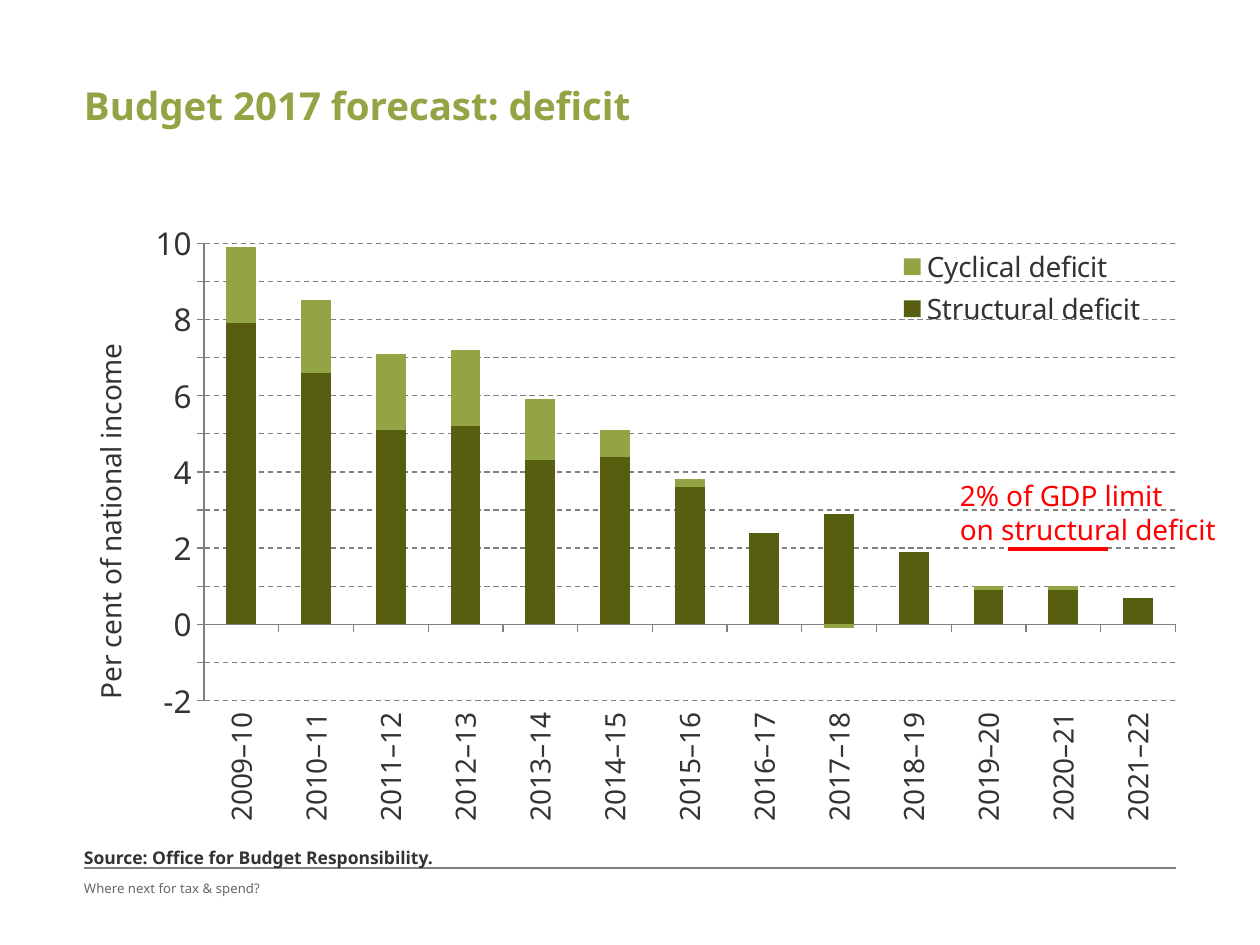
"""Build the Budget 2017 deficit forecast slide."""
from dataclasses import dataclass

from lxml.etree import SubElement
from pptx import Presentation
from pptx.chart.data import CategoryChartData
from pptx.dml.color import RGBColor
from pptx.enum.chart import XL_CHART_TYPE, XL_LEGEND_POSITION, XL_TICK_LABEL_POSITION, XL_TICK_MARK
from pptx.enum.dml import MSO_LINE
from pptx.enum.shapes import MSO_CONNECTOR
from pptx.oxml import parse_xml
from pptx.oxml.ns import nsdecls, qn
from pptx.util import Pt


@dataclass(frozen=True)
class Theme:
    font: str = "Noto Sans"
    cyclical: str = "93A445"
    structural: str = "585E10"
    text: str = "333333"
    footer: str = "666666"
    rule: str = "808080"
    limit: str = "FF0000"
    title_size: float = 22
    axis_size: float = 18
    label_size: float = 16
    source_size: float = 10
    footer_size: float = 7.5


THEME = Theme()
YEARS = [f"{year}–{(year + 1) % 100:02d}" for year in range(2009, 2022)]
SERIES = {
    "Structural deficit": (
        THEME.structural, (7.9, 6.6, 5.1, 5.2, 4.3, 4.4, 3.6, 2.4, 2.9, 1.9, 0.9, 0.9, 0.7)),
    "Cyclical deficit": (
        THEME.cyclical, (2, 1.9, 2, 2, 1.6, 0.7, 0.2, 0, -0.1, 0, 0.1, 0.1, 0)),
}


def style_font(font, size, color, bold=False):
    font.name = THEME.font
    font.size = Pt(size)
    font.bold = bold
    font.color.rgb = RGBColor.from_string(color)


def style_line(line, color, width):
    line.color.rgb = RGBColor.from_string(color)
    line.width = Pt(width)


def add_text(slide, box, lines, size, color, bold=False, inset=(0, 0)):
    shape = slide.shapes.add_textbox(*map(Pt, box))
    frame = shape.text_frame
    frame.word_wrap = True
    frame.margin_left = frame.margin_right = Pt(inset[0])
    frame.margin_top = frame.margin_bottom = Pt(inset[1])
    for index, line in enumerate(lines):
        paragraph = frame.add_paragraph() if index else frame.paragraphs[0]
        run = paragraph.add_run()
        run.text = line
        style_font(run.font, size, color, bold)


def add_rule(slide, left, right, top, color, width):
    connector = slide.shapes.add_connector(
        MSO_CONNECTOR.STRAIGHT, Pt(left), Pt(top), Pt(right), Pt(top))
    style_line(connector.line, color, width)
    SubElement(connector._element.spPr, qn("a:effectLst"))


def place(element, position, **sizes):
    """Give a chart element a manual layout at a child position."""
    for layout in element.findall(qn("c:layout")):
        element.remove(layout)
    target = '<c:layoutTarget val="inner"/>' if element.tag == qn("c:plotArea") else ""
    modes = "".join(f'<c:{name}Mode val="edge"/>' for name in "xy")
    values = "".join(f'<c:{name} val="{value}"/>' for name, value in sizes.items())
    element.insert(position, parse_xml(
        f'<c:layout {nsdecls("c")}><c:manualLayout>{target}{modes}{values}'
        '</c:manualLayout></c:layout>'))


def style_axes(chart):
    category, value = chart.category_axis, chart.value_axis
    for axis, size in ((category, THEME.label_size), (value, THEME.axis_size)):
        style_font(axis.tick_labels.font, size, THEME.text)
        style_line(axis.format.line, THEME.rule, 0.75)
    category.tick_label_position = XL_TICK_LABEL_POSITION.LOW
    category.major_tick_mark = XL_TICK_MARK.OUTSIDE
    category._element.find(qn("c:txPr")).find(qn("a:bodyPr")).set("rot", "-5400000")
    value.minimum_scale, value.maximum_scale, value.major_unit = -2, 10, 1
    value.major_tick_mark = XL_TICK_MARK.OUTSIDE
    value.tick_labels.number_format = "0"
    value.tick_labels.number_format_is_linked = False
    gridline = value.major_gridlines.format.line
    style_line(gridline, THEME.rule, 0.75)
    gridline.dash_style = MSO_LINE.DASH
    frame = value.axis_title.text_frame
    run = frame.paragraphs[0].add_run()
    run.text = "Per cent of national income"
    style_font(run.font, THEME.label_size, THEME.text)
    frame._txBody.find(qn("a:bodyPr")).set("rot", "-5400000")
    place(value.axis_title._element, 1, x=0, y=0.19)


def add_deficit_chart(slide, box):
    data = CategoryChartData()
    data.categories = YEARS
    for name, (_, values) in SERIES.items():
        data.add_series(name, values)
    chart = slide.shapes.add_chart(
        XL_CHART_TYPE.COLUMN_STACKED, *map(Pt, box), data).chart
    chart.has_title = False
    style_font(chart.font, THEME.axis_size, THEME.text)
    plot = chart.plots[0]
    plot.gap_width, plot.overlap, plot.vary_by_categories = 150, 100, False
    for series in plot.series:
        series.invert_if_negative = False
        series.format.fill.solid()
        series.format.fill.fore_color.rgb = RGBColor.from_string(SERIES[series.name][0])
    style_axes(chart)
    chart.has_legend = True
    legend = chart.legend
    legend.position = XL_LEGEND_POSITION.RIGHT
    legend.include_in_layout = False
    style_font(legend.font, THEME.label_size, THEME.text)
    place(legend._element, 1, x=0.74, y=0.04, w=0.24, h=0.14)
    place(chart._chartSpace.chart.plotArea, 0, x=0.11, y=0.04, w=0.89, h=0.72)


def main():
    presentation = Presentation()
    presentation.slide_width, presentation.slide_height = Pt(720), Pt(540)
    slide = presentation.slides.add_slide(presentation.slide_layouts[6])
    left, right = 48, 672
    add_rule(slide, left, right, 496, THEME.rule, 0.75)
    add_text(slide, (left, 47, 516, 32), ["Budget 2017 forecast: deficit"],
             THEME.title_size, THEME.cyclical, bold=True)
    add_deficit_chart(slide, (left, 124.5, right - left, 363))
    add_text(slide, (left, 503, 228, 29), ["Where next for tax & spend?"],
             THEME.footer_size, THEME.footer)
    add_text(slide, (541.4, 270, 170, 45), ["2% of GDP limit", "on structural deficit"],
             THEME.label_size, THEME.limit, inset=(7.2, 3.6))
    add_rule(slide, 576, 633, 313.8, THEME.limit, 2)
    add_text(slide, (left, 484, 550, 13), ["Source: Office for Budget Responsibility."],
             THEME.source_size, THEME.text, bold=True)
    presentation.save("out.pptx")


if __name__ == "__main__":
    main()
